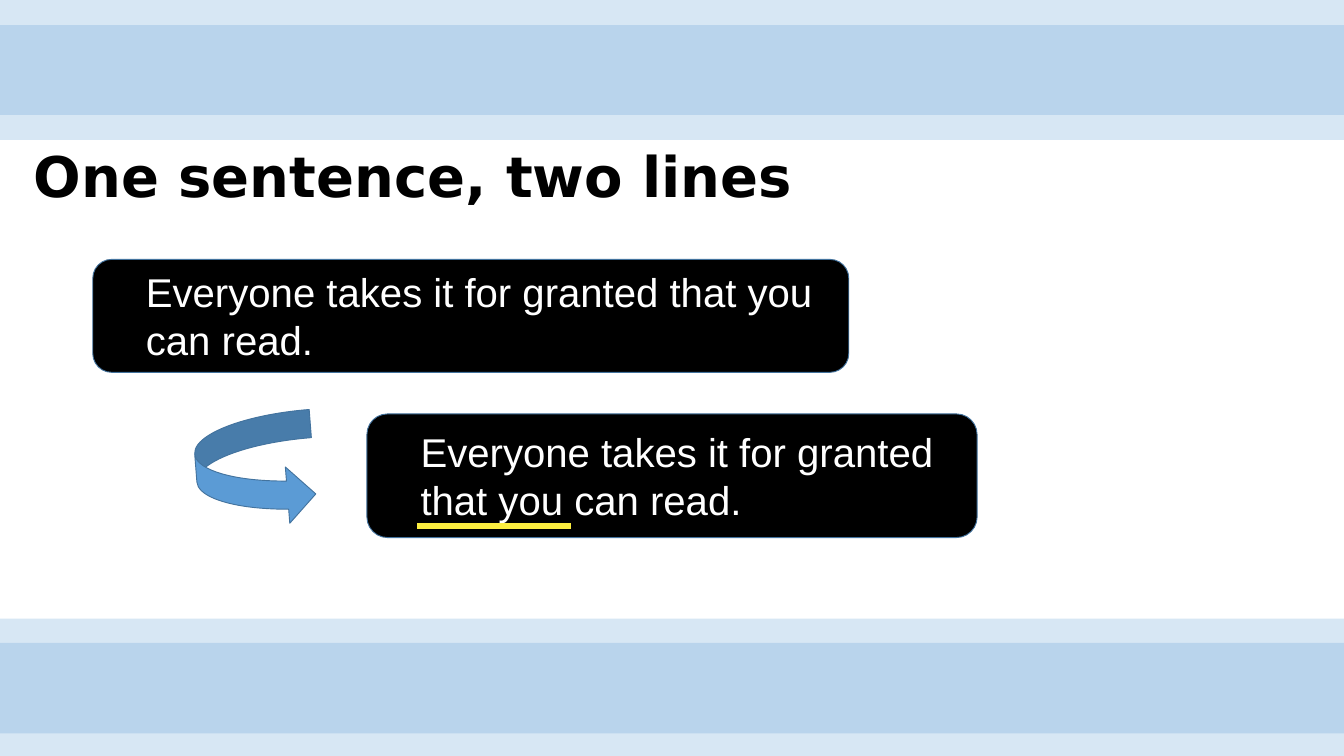
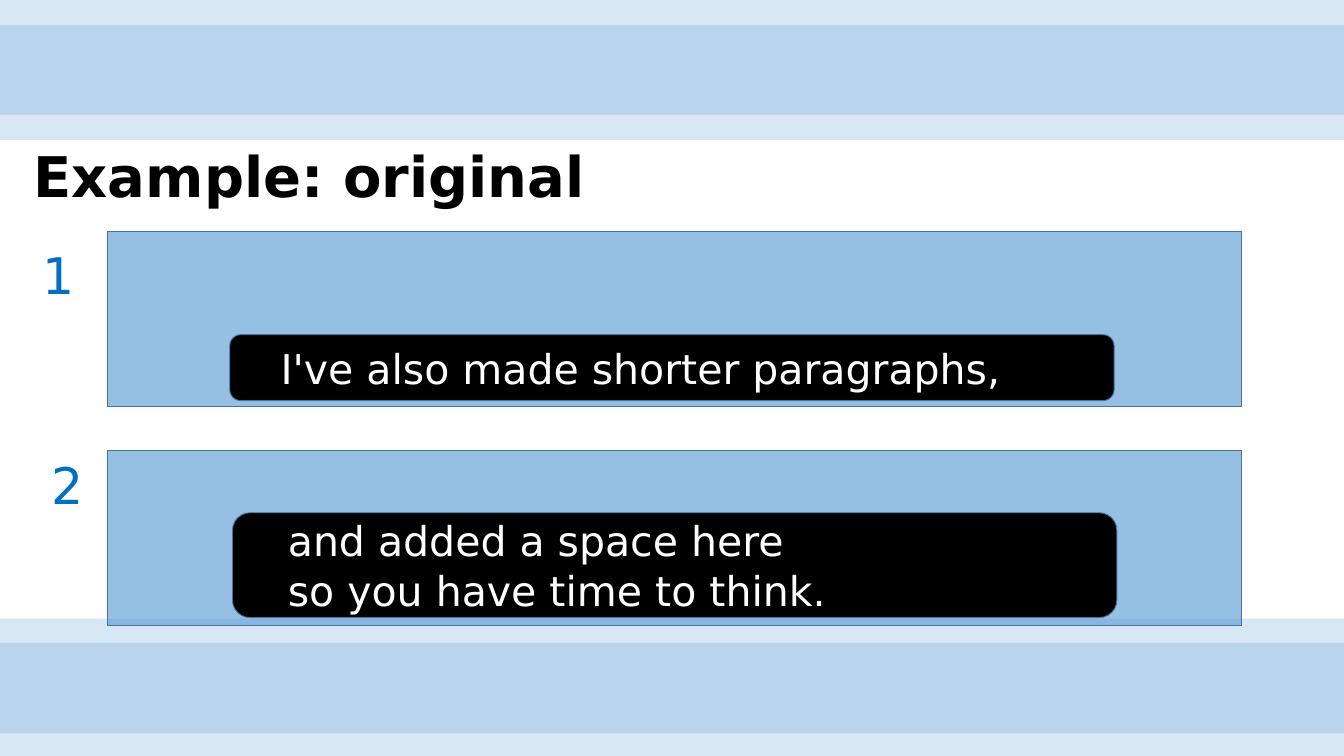
import pptx
import pptx.dml.color
import pptx.enum.shapes
import pptx.enum.text
import pptx.oxml.ns
import pptx.util
from lxml import etree

Pt = pptx.util.Pt
SHAPE = pptx.enum.shapes.MSO_SHAPE
ANCHOR = pptx.enum.text.MSO_ANCHOR
ALIGN = pptx.enum.text.PP_ALIGN
qn = pptx.oxml.ns.qn

COLORS = {
    "black": "000000",
    "white": "FFFFFF",
    "blue": "5B9BD5",
    "outline": "43739E",
    "number": "0070C0",
    "yellow": "FBEE40",
}
WIDTH, HEIGHT = 1440, 810
BAND_HEIGHT = 123
BAND_TOPS = (0, 27, 662.8, 688.7)


def rgb(name):
    return pptx.dml.color.RGBColor.from_string(COLORS[name])


def write(sp, text, size, color, font="DejaVu Sans", bold=False,
          anchor=ANCHOR.TOP, indent=0, spacing=None, insets=(7.2, 3.6)):
    """Put one paragraph into a shape; a newline becomes a line break."""
    tf = sp.text_frame
    tf.word_wrap = True
    tf.vertical_anchor = anchor
    tf.margin_left = tf.margin_right = Pt(insets[0])
    tf.margin_top = tf.margin_bottom = Pt(insets[1])
    p = tf.paragraphs[0]
    p.text = text
    p.alignment = ALIGN.LEFT
    if spacing:
        p.line_spacing = spacing
    if indent:
        pPr = p._p.get_or_add_pPr()
        pPr.set("marL", str(Pt(indent)))
        pPr.set("indent", "0")
    for r in p.runs:
        r.font.name = font
        r.font.size = Pt(size)
        r.font.bold = bold
        r.font.color.rgb = rgb(color)


class Deck:
    def __init__(self):
        self.prs = pptx.Presentation()
        self.prs.slide_width, self.prs.slide_height = Pt(WIDTH), Pt(HEIGHT)
        self.s = None

    def slide(self, title):
        self.s = self.prs.slides.add_slide(self.prs.slide_layouts[6])
        for top in BAND_TOPS:
            self.shape(SHAPE.RECTANGLE, 0, top, WIDTH, BAND_HEIGHT,
                       alpha=24, line=None)
        sp = self.textbox(25.2, 150.5, 958.3, 83.5)
        write(sp, title, 60, "black", bold=True, anchor=ANCHOR.MIDDLE,
              spacing=0.9, insets=(10.8, 5))

    def shape(self, kind, x, y, w, h, fill="blue", alpha=None, line="outline"):
        sp = self.s.shapes.add_shape(kind, Pt(x), Pt(y), Pt(w), Pt(h))
        sp.shadow.inherit = False
        sp.fill.solid()
        sp.fill.fore_color.rgb = rgb(fill)
        if alpha is not None:
            clr = sp._element.spPr.find(qn("a:solidFill")).find(qn("a:srgbClr"))
            etree.SubElement(clr, qn("a:alpha"), val=str(alpha * 1000))
        if line:
            sp.line.color.rgb = rgb(line)
            sp.line.width = Pt(1)
        else:
            sp.line.fill.background()
        return sp

    def textbox(self, x, y, w, h):
        return self.s.shapes.add_textbox(Pt(x), Pt(y), Pt(w), Pt(h))

    def subtitle(self, text, x, y, w, h, size=44, font="DejaVu Sans", indent=43.9):
        """A black rounded caption box, as shown under a video."""
        sp = self.shape(SHAPE.ROUNDED_RECTANGLE, x, y, w, h, fill="black")
        write(sp, text, size, "white", font=font, anchor=ANCHOR.MIDDLE, indent=indent)

    def screen(self, y):
        self.shape(SHAPE.RECTANGLE, 115.2, y, 1215.4, 187.9, alpha=64)

    def number(self, text, x, y, w):
        sp = self.textbox(x, y, w, 72.7)
        write(sp, text, 54, "number")
        sp.text_frame.auto_size = pptx.enum.text.MSO_AUTO_SIZE.SHAPE_TO_FIT_TEXT

    def turn_arrow(self, x, y, w, h, rotation):
        self.shape(SHAPE.CURVED_RIGHT_ARROW, x, y, w, h).rotation = rotation

    def underline(self, x1, x2, y):
        cx = self.s.shapes.add_connector(
            pptx.enum.shapes.MSO_CONNECTOR.STRAIGHT, Pt(x1), Pt(y), Pt(x2), Pt(y))
        cx.line.color.rgb = rgb("yellow")
        cx.line.width = Pt(6.5)
        etree.SubElement(cx._element.spPr, qn("a:effectLst"))


def sentence_slide(deck):
    deck.slide("One sentence, two lines")
    arial = {"size": 43, "font": "Arial"}
    deck.subtitle("Everyone takes it for granted that you\ncan read.",
                  99.4, 277.9, 810, 121, **arial)
    deck.subtitle("Everyone takes it for granted\nthat you can read.",
                  393.1, 443.5, 653.8, 132.5, **arial)
    deck.turn_arrow(210.2, 443.5, 126, 121, 355.5)
    deck.underline(447.1, 612, 563.8)


def example_slide(deck):
    deck.slide("Example: original")
    deck.screen(247.7)
    deck.subtitle("I've also made shorter paragraphs,", 246.2, 358.6, 947.5, 70.6)
    deck.screen(482.4)
    deck.subtitle("and added a space here\nso you have time to think.",
                  249.1, 549.4, 947.5, 112.3, indent=46.8)
    deck.number("1", 38.9, 257.8, 90.7)
    deck.number("2", 48.2, 483.1, 102.2)


def main():
    deck = Deck()
    sentence_slide(deck)
    example_slide(deck)
    deck.prs.save("out.pptx")


if __name__ == "__main__":
    main()
